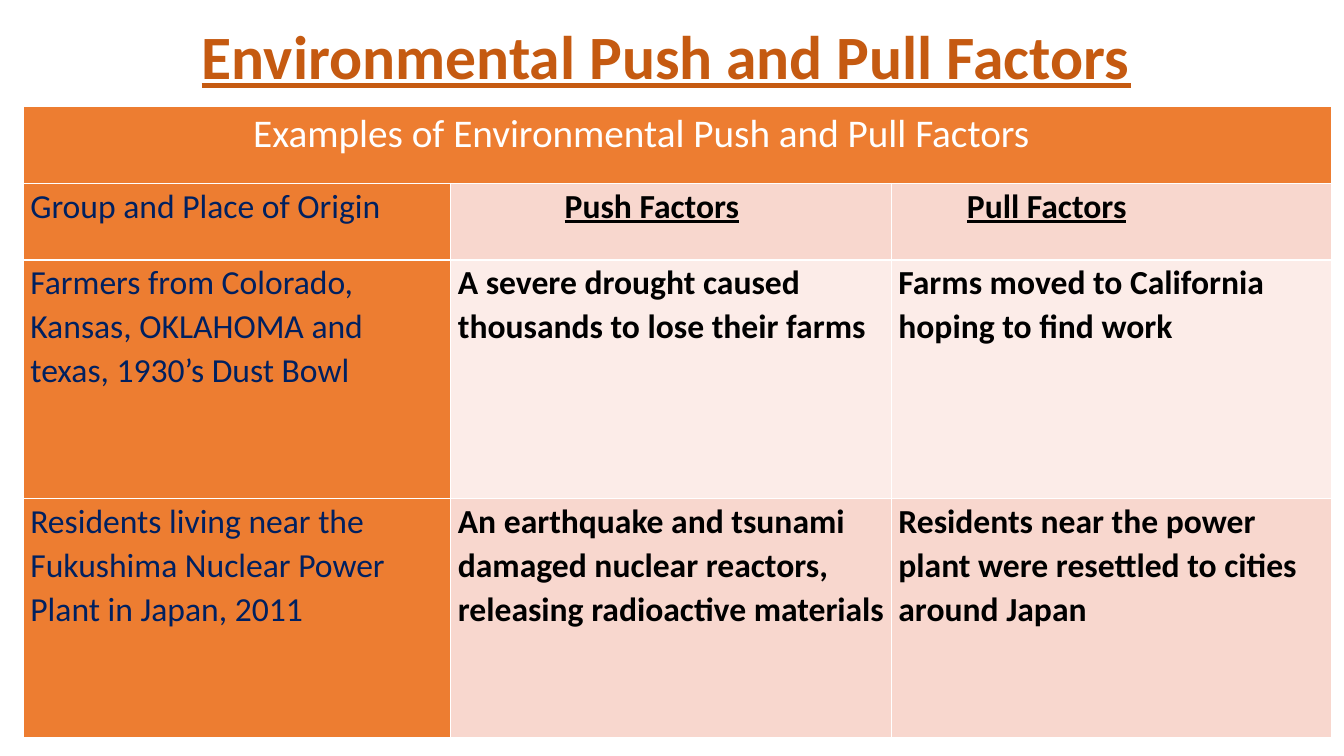
from lxml import etree
from pptx import Presentation
from pptx import util as u
from pptx.dml.color import RGBColor
from pptx.enum import text
from pptx.oxml import ns

WIDTH, HEIGHT = u.Inches(13.33), u.Inches(7.5)
FONT = "Calibri"
ORANGE, NAVY, BLACK, WHITE = "ED7D31", "002060", "000000", "FFFFFF"
RUST, PINK, PALE_PINK = "C55A11", "F8D7CE", "FCECE8"
COLUMN_WIDTHS = [31.81, 32.78, 32.78]
ROW_HEIGHTS = [10.13, 10.13, 31.6, 31.6]
CAPTION = "Examples of Environmental Push and Pull Factors"
ROWS = [
    ("Group and Place of Origin", "Push Factors", "Pull Factors"),
    ("Farmers from Colorado, Kansas, OKLAHOMA and texas, 1930’s Dust Bowl",
     "A severe drought caused thousands to lose their farms",
     "Farms moved to California hoping to find work"),
    ("Residents living near the Fukushima Nuclear Power Plant in Japan, 2011",
     "An earthquake and tsunami damaged nuclear reactors, releasing radioactive materials",
     "Residents near the power plant were resettled to cities around Japan"),
]
HEADING_INDENTS = [0, 7.95, 5.1]


def across(percent):
    return u.Emu(round(WIDTH * percent / 100))


def down(percent):
    return u.Emu(round(HEIGHT * percent / 100))


def color(value):
    return RGBColor.from_string(value)


def write(frame, content, size, ink, bold=False, underline=False, indent=0, spacing=1.07):
    frame.text = content
    paragraph = frame.paragraphs[0]
    paragraph.alignment = text.PP_ALIGN.LEFT
    paragraph.line_spacing = spacing
    properties = paragraph._p.get_or_add_pPr()
    properties.set("marL", str(across(indent)))
    properties.set("indent", "0")
    font = paragraph.runs[0].font
    font.name, font.size = FONT, u.Pt(size)
    font.bold, font.underline = bold, underline
    font.color.rgb = color(ink)


def style_cell(cell, fill):
    cell.margin_left = cell.margin_right = across(0.53)
    cell.margin_top = cell.margin_bottom = 0
    cell.fill.solid()
    cell.fill.fore_color.rgb = color(fill)
    properties = cell._tc.get_or_add_tcPr()
    for position, side in enumerate(("lnL", "lnR", "lnT", "lnB")):
        line = etree.Element(ns.qn(f"a:{side}"), w=str(u.Pt(1)))
        line_fill = etree.SubElement(line, ns.qn("a:solidFill"))
        etree.SubElement(line_fill, ns.qn("a:srgbClr"), val=WHITE)
        properties.insert(position, line)


def add_title(slide):
    title = slide.shapes.title
    title.left, title.top = across(6.98), down(1.6)
    title.width, title.height = across(91.3), down(12.53)
    frame = title.text_frame
    frame.auto_size = text.MSO_AUTO_SIZE.NONE
    frame.vertical_anchor = text.MSO_ANCHOR.MIDDLE
    write(frame, "Environmental Push and Pull Factors", 44, RUST,
          bold=True, underline=True, indent=7.28, spacing=0.9)


def add_factor_table(slide):
    table = slide.shapes.add_table(
        len(ROW_HEIGHTS), len(COLUMN_WIDTHS), across(1.73), down(14.13),
        across(sum(COLUMN_WIDTHS)), down(sum(ROW_HEIGHTS))).table
    for column, width in zip(table.columns, COLUMN_WIDTHS):
        column.width = across(width)
    for row, height in zip(table.rows, ROW_HEIGHTS):
        row.height = down(height)

    for column in range(len(COLUMN_WIDTHS)):
        style_cell(table.cell(0, column), ORANGE)
    caption = table.cell(0, 0)
    caption.merge(table.cell(0, len(COLUMN_WIDTHS) - 1))
    write(caption.text_frame, CAPTION, 28, WHITE, indent=16.58)

    for row, contents in enumerate(ROWS, 1):
        band = PINK if row % 2 else PALE_PINK
        for column, content in enumerate(contents):
            cell = table.cell(row, column)
            is_factor, is_heading = column > 0, row == 1
            style_cell(cell, band if is_factor else ORANGE)
            write(cell.text_frame, content, 24, BLACK if is_factor else NAVY,
                  bold=is_factor, underline=is_factor and is_heading,
                  indent=HEADING_INDENTS[column] if is_heading else 0)


def main():
    presentation = Presentation()
    presentation.slide_width, presentation.slide_height = WIDTH, HEIGHT
    slide = presentation.slides.add_slide(presentation.slide_layouts[5])
    add_title(slide)
    add_factor_table(slide)
    presentation.save("out.pptx")


if __name__ == "__main__":
    main()
